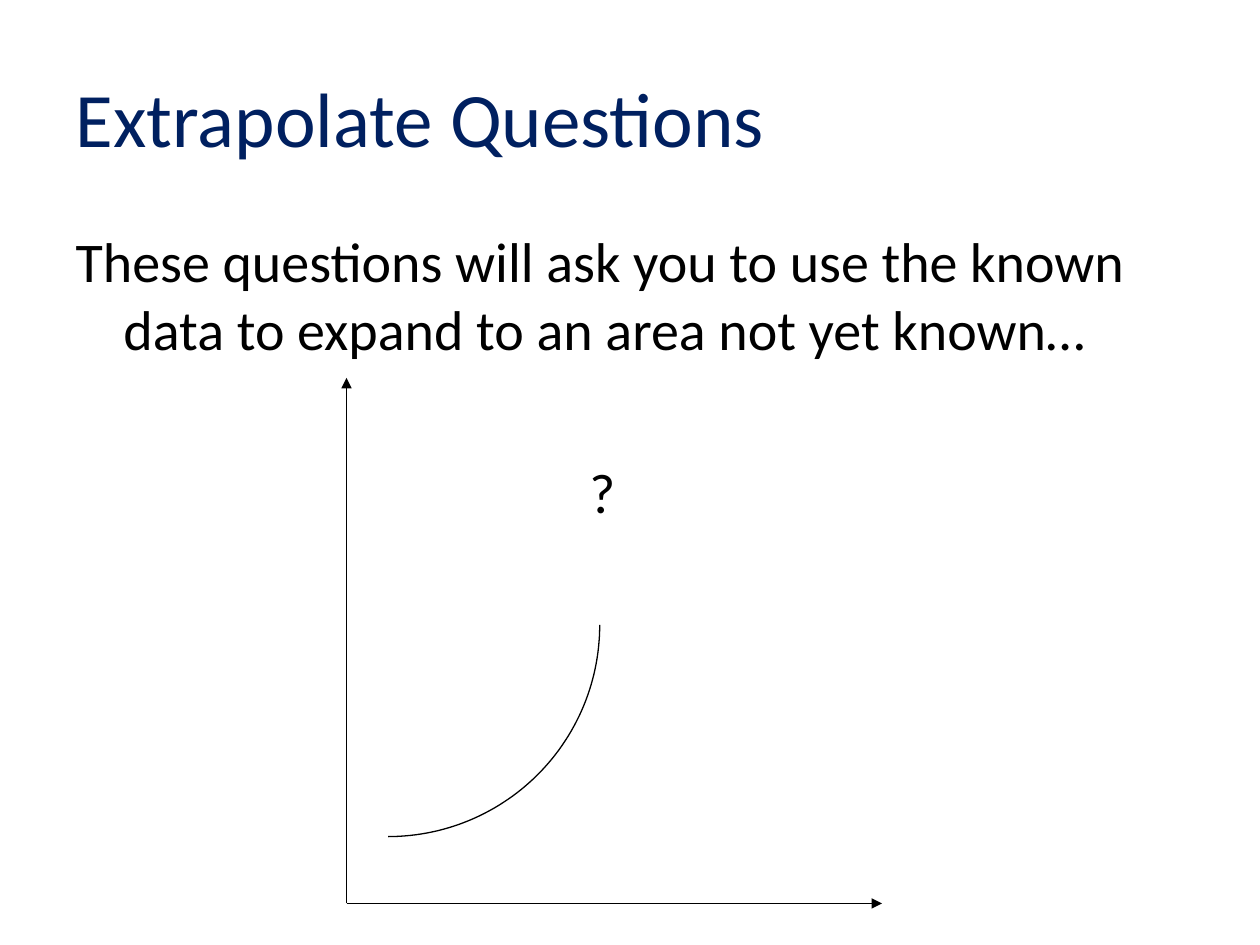
from math import cos, pi, sin

from lxml.etree import SubElement
from pptx import Presentation
from pptx.dml.color import RGBColor
from pptx.enum.shapes import MSO_CONNECTOR, MSO_SHAPE
from pptx.enum.text import MSO_ANCHOR, PP_ALIGN
from pptx.oxml.ns import qn
from pptx.util import Inches, Pt

COLORS = {"title": "002060", "ink": "000000", "paper": "FFFFFF"}
COLUMNS, ROWS = 40, 30


class SlideBuilder:
    font = "Calibri"
    line_width = Pt(0.75)

    def __init__(self, deck):
        self.deck = deck
        self.page = deck.slides.add_slide(deck.slide_layouts[1])

    def column(self, count):
        return round(self.deck.slide_width * count / COLUMNS)

    def row(self, count):
        return round(self.deck.slide_height * count / ROWS)

    def area(self, left, top, width, height):
        return self.column(left), self.row(top), self.column(width), self.row(height)

    def color(self, name):
        return RGBColor.from_string(COLORS[name])

    def apply(self, target, formats):
        for name, value in formats.items():
            setattr(target, name, value)

    def fill_text(self, shape, text, size, color, anchor):
        self.apply(shape.text_frame, {"word_wrap": True, "vertical_anchor": anchor})
        para = shape.text_frame.paragraphs[0]
        para.alignment = PP_ALIGN.LEFT
        span = para.add_run()
        span.text = text
        self.apply(span.font, {"name": self.font, "size": Pt(size)})
        span.font.color.rgb = self.color(color)
        return para

    def placeholder(self, index, area, text, size, color, anchor):
        box = self.page.placeholders[index]
        names = ("left", "top", "width", "height")
        self.apply(box, dict(zip(names, self.area(*area))))
        return self.fill_text(box, text, size, color, anchor)

    def title(self, text, area):
        self.placeholder(0, area, text, 44, "title", MSO_ANCHOR.MIDDLE)

    def body(self, text, area):
        para = self.placeholder(1, area, text, 32, "ink", MSO_ANCHOR.TOP)
        properties = para._p.get_or_add_pPr()
        indent = Inches(0.38)
        properties.set("marL", str(indent))
        properties.set("indent", str(-indent))
        SubElement(properties, qn("a:buNone"))

    def outline(self, shape, color):
        shape.line.color.rgb = self.color(color)
        shape.line.width = self.line_width

    def arrow(self, start, end):
        line = self.page.shapes.add_connector(
            MSO_CONNECTOR.STRAIGHT,
            self.column(start[0]), self.row(start[1]),
            self.column(end[0]), self.row(end[1]),
        )
        self.outline(line, "ink")
        SubElement(line.line._get_or_add_ln(), qn("a:tailEnd"), type="triangle")
        SubElement(line._element.spPr, qn("a:effectLst"))

    def quarter_curve(self, center, radius, steps=60):
        angles = [pi / 2 * (1 - step / steps) for step in range(steps + 1)]
        points = [
            (self.column(center[0] + radius * cos(angle)),
             self.row(center[1] + radius * sin(angle)))
            for angle in angles
        ]
        builder = self.page.shapes.build_freeform(*points[0])
        builder.add_line_segments(points[1:], close=False)
        curve = builder.convert_to_shape()
        curve.shadow.inherit = False
        curve.fill.background()
        self.outline(curve, "ink")

    def label(self, text, area):
        box = self.page.shapes.add_shape(MSO_SHAPE.RECTANGLE, *self.area(*area))
        box.shadow.inherit = False
        box.fill.solid()
        box.fill.fore_color.rgb = self.color("paper")
        self.outline(box, "paper")
        para = self.fill_text(box, text, 32, "ink", MSO_ANCHOR.TOP)
        para.space_after = Pt(10)


def main():
    deck = Presentation()
    deck.slide_width, deck.slide_height = Inches(10), Inches(7.5)
    slide = SlideBuilder(deck)
    slide.title("Extrapolate Questions", (2, 1.2, 36, 5))
    slide.body(
        "These questions will ask you to use the known data "
        "to expand to an area not yet known…",
        (2, 7, 36, 5),
    )
    origin = (11, 28.68)
    for end in ((28, origin[1]), (origin[0], 12)):
        slide.arrow(origin, end)
    slide.quarter_curve(center=(12.32, 19.84), radius=6.72)
    slide.label("?", (18.32, 14.32, 2.84, 3.72))
    deck.save("out.pptx")


if __name__ == "__main__":
    main()
